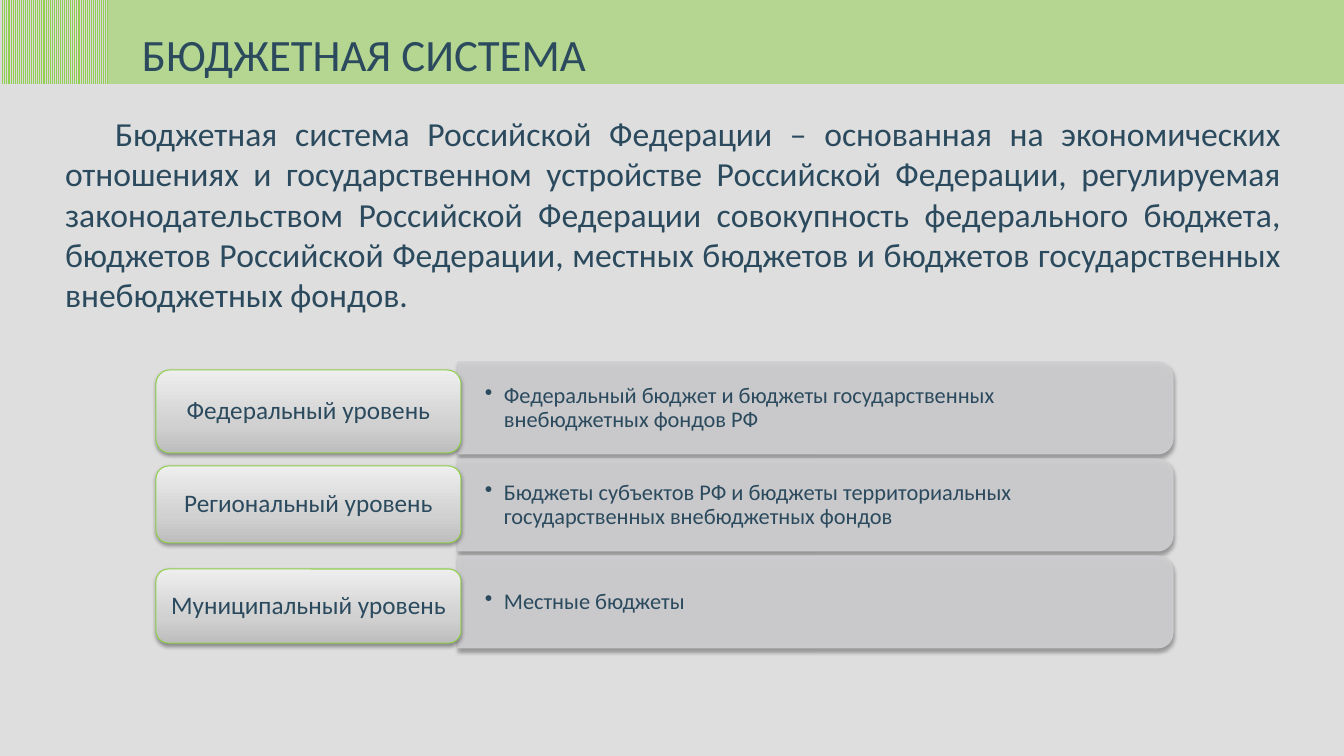
from dataclasses import dataclass

from lxml import etree
from pptx import Presentation
from pptx import util as u
from pptx.dml.color import RGBColor
from pptx.enum import dml, shapes, text
from pptx.oxml.ns import qn

PX = u.Inches(7.5) / 756


@dataclass(frozen=True)
class Theme:
    font: str = "Calibri"
    ink: str = "2B4A5E"
    background: str = "DEDEDE"
    green: str = "92D050"
    stripe: str = "D9D9D9"
    panel: str = "CFCFD1"
    label_stops: tuple = ((0, "BDBDBD"), (35, "D1D1D1"), (100, "EEEEEE"))
    title_size: int = 32
    body_size: int = 24
    label_size: int = 18
    detail_size: int = 16
    line_width: float = 0.75


THEME = Theme()
TITLE = "БЮДЖЕТНАЯ СИСТЕМА"
DEFINITION = (
    "Бюджетная система Российской Федерации – основанная на экономических отношениях "
    "и государственном устройстве Российской Федерации, регулируемая законодательством "
    "Российской Федерации совокупность федерального бюджета, бюджетов Российской "
    "Федерации, местных бюджетов и бюджетов государственных внебюджетных фондов."
)
# Level name, its budgets, label top, label height
LEVELS = (
    ("Федеральный уровень",
     "Федеральный бюджет и бюджеты государственных внебюджетных фондов РФ", 370, 83),
    ("Региональный уровень",
     "Бюджеты субъектов РФ и бюджеты территориальных государственных внебюджетных фондов",
     466, 77),
    ("Муниципальный уровень", "Местные бюджеты", 569, 74),
)
LABEL_LEFT, LABEL_WIDTH = 156, 305
PANEL_LEFT, PANEL_TOP, PANEL_WIDTH, PANEL_HEIGHT, PANEL_STEP = 458, 362, 715, 92, 97


def px(length):
    return u.Emu(round(length * PX))


def rgb(color):
    return RGBColor.from_string(color)


def add_node(parent, tag, **attributes):
    return etree.SubElement(parent, qn(tag), {k: str(v) for k, v in attributes.items()})


def place(shape, left, top, width, height):
    shape.left, shape.top, shape.width, shape.height = map(px, (left, top, width, height))


def add_preset(shape_tree, preset, left, top, width, height):
    shape = shape_tree.add_shape(preset, *map(px, (left, top, width, height)))
    shape.shadow.inherit = False
    shape.line.fill.background()
    return shape


def fill_solid(fill, color, opacity=100):
    fill.solid()
    fill.fore_color.rgb = rgb(color)
    return opacity


def set_opacity(shape, percent):
    """Apply one opacity to the plain fill and, where present, the line."""
    for color in shape.element.spPr.iter(qn("a:srgbClr")):
        add_node(color, "a:alpha", val=percent * 1000)


def set_line(shape, color):
    shape.line.color.rgb = rgb(color)
    shape.line.width = u.Pt(THEME.line_width)


def add_shadow(shape, distance, opacity):
    effects = shape.element.spPr.find(qn("a:effectLst"))
    shadow = add_node(effects, "a:outerShdw", blurRad=u.Pt(3.1), dist=u.Pt(distance),
                      dir=5400000, rotWithShape=0)
    color = add_node(shadow, "a:srgbClr", val="000000")
    add_node(color, "a:alpha", val=opacity * 1000)


def fill_gradient(shape, stops):
    """Fill from bottom to top with (percent, color) stops."""
    shape.fill.gradient()
    shape.fill.gradient_angle = 90
    stop_list = shape.element.spPr.find(".//" + qn("a:gsLst"))
    for old_stop in list(stop_list):
        stop_list.remove(old_stop)
    for percent, color in stops:
        stop = add_node(stop_list, "a:gs", pos=percent * 1000)
        add_node(stop, "a:srgbClr", val=color)


def write(shape, content, *, size, align=text.PP_ALIGN.LEFT, anchor=text.MSO_ANCHOR.TOP,
          margins=(10, 5), wrap=True, spacing=1.0, left=0, indent=0, bullet=None):
    """Set the shape's single paragraph; margins are horizontal and vertical px."""
    frame = shape.text_frame
    frame.word_wrap = wrap
    frame.auto_size = text.MSO_AUTO_SIZE.NONE
    frame.vertical_anchor = anchor
    frame.margin_left = frame.margin_right = px(margins[0])
    frame.margin_top = frame.margin_bottom = px(margins[1])
    paragraph = frame.paragraphs[0]
    paragraph.alignment = align
    paragraph.line_spacing = spacing
    paragraph.space_before = u.Pt(0)
    properties = paragraph._p.get_or_add_pPr()
    properties.set("marL", str(px(left)))
    properties.set("indent", str(px(indent)))
    if bullet:
        add_node(properties, "a:buChar", char=bullet)
    else:
        add_node(properties, "a:buNone")
    run = paragraph.add_run()
    run.text = content
    run.font.name = THEME.font
    run.font.size = u.Pt(size)
    run.font.color.rgb = rgb(THEME.ink)


def add_header(slide):
    """Put the band and its striped corner behind the title."""
    band = add_preset(slide.shapes, shapes.MSO_SHAPE.RECTANGLE, 0, 0, 1344, 84)
    fill_solid(band.fill, THEME.green)
    set_opacity(band, 54)
    corner = add_preset(slide.shapes, shapes.MSO_SHAPE.RECTANGLE, 0, 0, 108, 84)
    corner.fill.patterned()
    corner.fill.pattern = dml.MSO_PATTERN.LIGHT_VERTICAL
    corner.fill.fore_color.rgb = rgb(THEME.green)
    corner.fill.back_color.rgb = rgb(THEME.stripe)
    title = slide.shapes.title
    for shape in (band, corner):
        title.element.addprevious(shape.element)
    place(title, 132, 22, 469, 65)
    write(title, TITLE, size=THEME.title_size, wrap=False)


def add_definition(slide):
    body = slide.placeholders[1]
    place(body, 55, 108, 1236, 214)
    write(body, DEFINITION, size=THEME.body_size, align=text.PP_ALIGN.JUSTIFY, indent=50)


def add_panel(shape_tree, top, detail):
    # The two rounded corners face right after a quarter turn about the centre.
    shift = (PANEL_WIDTH - PANEL_HEIGHT) / 2
    panel = add_preset(shape_tree, shapes.MSO_SHAPE.ROUND_2_SAME_RECTANGLE,
                       PANEL_LEFT + shift, top - shift, PANEL_HEIGHT, PANEL_WIDTH)
    panel.rotation = 90
    fill_solid(panel.fill, THEME.panel)
    set_line(panel, THEME.panel)
    set_opacity(panel, 90)
    add_shadow(panel, distance=1.8, opacity=35)
    box = shape_tree.add_textbox(*map(px, (PANEL_LEFT, top + 5, 711, 83)))
    write(box, detail, size=THEME.detail_size, anchor=text.MSO_ANCHOR.MIDDLE,
          margins=(27, 14), spacing=0.9, left=19, indent=-19, bullet="•")


def add_label(shape_tree, top, height, name):
    label = add_preset(shape_tree, shapes.MSO_SHAPE.ROUNDED_RECTANGLE,
                       LABEL_LEFT, top, LABEL_WIDTH, height)
    fill_gradient(label, THEME.label_stops)
    set_line(label, THEME.green)
    add_shadow(label, distance=1.6, opacity=38)
    write(label, name, size=THEME.label_size, align=text.PP_ALIGN.CENTER,
          anchor=text.MSO_ANCHOR.MIDDLE, margins=(11, 8), spacing=0.9)


def main():
    presentation = Presentation()
    presentation.slide_width, presentation.slide_height = px(1344), px(756)
    slide = presentation.slides.add_slide(presentation.slide_layouts[1])
    fill_solid(slide.background.fill, THEME.background)
    add_header(slide)
    add_definition(slide)
    levels = slide.shapes.add_group_shape().shapes
    for row, (name, detail, label_top, label_height) in enumerate(LEVELS):
        add_panel(levels, PANEL_TOP + row * PANEL_STEP, detail)
        add_label(levels, label_top, label_height, name)
    presentation.save("out.pptx")


if __name__ == "__main__":
    main()
